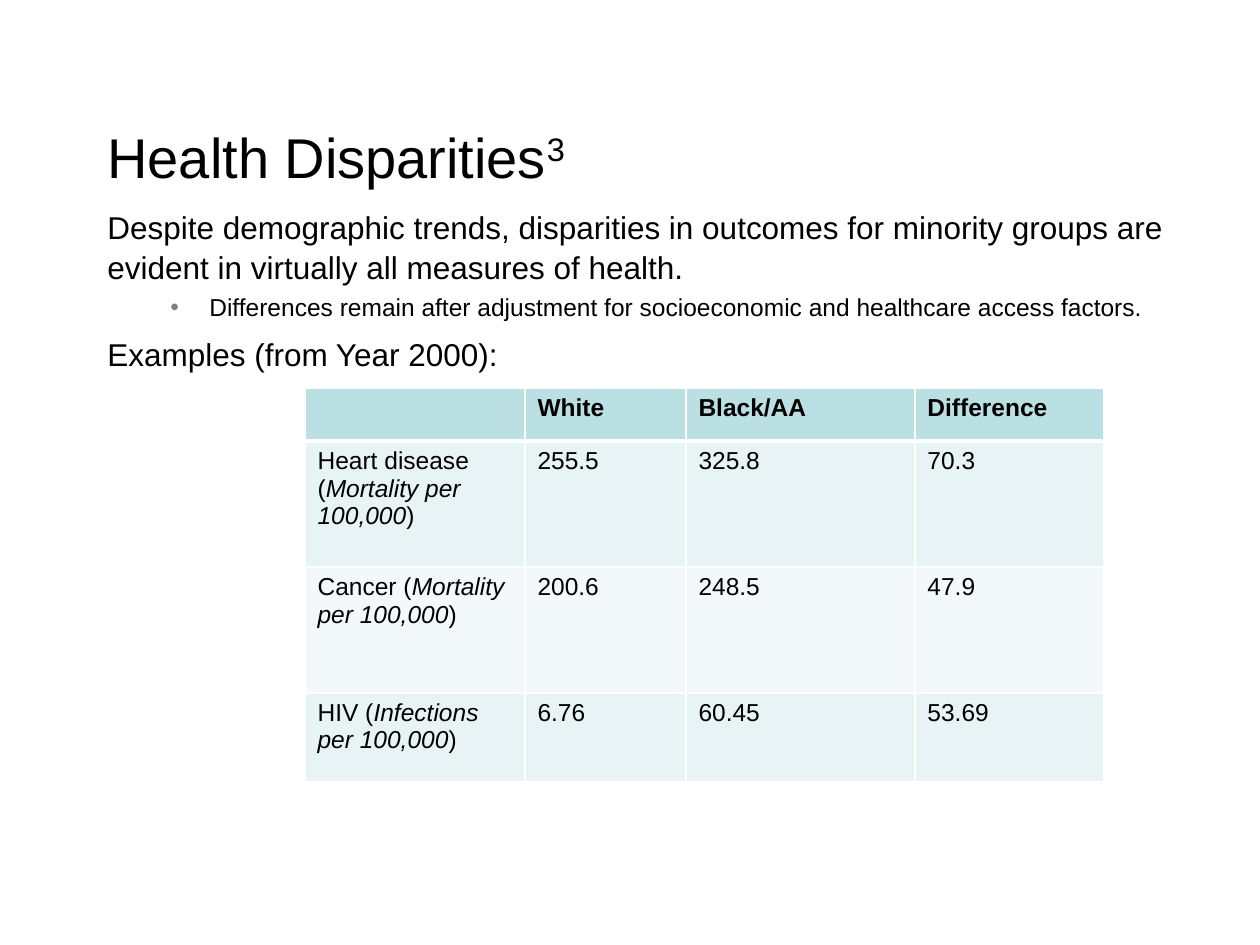
from lxml import etree
from pptx import Presentation
from pptx.dml.color import RGBColor
from pptx.oxml import ns
from pptx.util import Emu, Pt

PX = 914400 // 126
COLORS = {"text": "000000", "bullet": "808080", "border": "FFFFFF",
          "header": "BBE0E3", "odd": "E7F3F4", "even": "F3F9FA"}


def add_span(para, words, size, bold=False, italic=False):
    span = para.add_run()
    span.text = words
    span.font.name = "Arial"
    span.font.size = Pt(size)
    span.font.bold = bold
    span.font.italic = italic
    span.font.color.rgb = RGBColor.from_string(COLORS["text"])
    return span


def add_border(properties, side, width):
    line = etree.SubElement(properties, ns.qn(f"a:ln{side}"), w=str(Pt(width)))
    fill = etree.SubElement(line, ns.qn("a:solidFill"))
    etree.SubElement(fill, ns.qn("a:srgbClr"), val=COLORS["border"])


deck = Presentation()
deck.slide_width = Emu(1260 * PX)
deck.slide_height = Emu(945 * PX)
page = deck.slides.add_slide(deck.slide_layouts[6])

title = page.shapes.add_textbox(95 * PX, 116 * PX, 1102 * PX, 116 * PX)
title.text_frame.word_wrap = True
para = title.text_frame.paragraphs[0]
add_span(para, "Health Disparities", 32)
note = add_span(para, "3", 32)
note.font._element.set("baseline", "30000")

body = page.shapes.add_textbox(95 * PX, 200 * PX, 1124 * PX, 494 * PX)
body.text_frame.word_wrap = True
statements = [
    ("Despite demographic trends, disparities in outcomes for minority groups are "
     "evident in virtually all measures of health.", 18, 0, False),
    ("Differences remain after adjustment for socioeconomic and healthcare access factors.",
     14, 2.8, True),
    ("Examples (from Year 2000):", 18, 6.5, False),
]
for index, (words, size, gap, bulleted) in enumerate(statements):
    para = body.text_frame.paragraphs[0] if index == 0 else body.text_frame.add_paragraph()
    para.line_spacing = 1.05
    para.space_before = Pt(gap)
    if bulleted:
        properties = para._p.get_or_add_pPr()
        properties.set("marL", str(102 * PX))
        properties.set("indent", str(-39 * PX))
        color = etree.SubElement(properties, ns.qn("a:buClr"))
        etree.SubElement(color, ns.qn("a:srgbClr"), val=COLORS["bullet"])
        etree.SubElement(properties, ns.qn("a:buFont"), typeface="Arial")
        etree.SubElement(properties, ns.qn("a:buChar"), char="•")
    add_span(para, words, size)

widths = [220, 161, 229, 189]
heights = [53, 126, 126, 89]
rows = [
    (None, "White", "Black/AA", "Difference"),
    (("Heart disease", "Mortality per 100,000"), "255.5", "325.8", "70.3"),
    (("Cancer", "Mortality per 100,000"), "200.6", "248.5", "47.9"),
    (("HIV", "Infections per 100,000"), "6.76", "60.45", "53.69"),
]
table = page.shapes.add_table(len(rows), len(widths), 305 * PX, 388 * PX,
                              sum(widths) * PX, sum(heights) * PX).table
for column, width in zip(table.columns, widths):
    column.width = Emu(width * PX)
for row, height in zip(table.rows, heights):
    row.height = Emu(height * PX)

for r, values in enumerate(rows):
    shade = "header" if r == 0 else "odd" if r % 2 else "even"
    for c, value in enumerate(values):
        cell = table.cell(r, c)
        properties = cell._tc.get_or_add_tcPr()
        add_border(properties, "L", 1)
        add_border(properties, "R", 1)
        add_border(properties, "T", 3 if r == 1 else 1)
        add_border(properties, "B", 3 if r == 0 else 1)
        cell.fill.solid()
        cell.fill.fore_color.rgb = RGBColor.from_string(COLORS[shade])
        para = cell.text_frame.paragraphs[0]
        if isinstance(value, tuple):
            condition, measure = value
            add_span(para, f"{condition} (", 14)
            add_span(para, measure, 14, italic=True)
            add_span(para, ")", 14)
        elif value:
            add_span(para, value, 14, bold=r == 0)

deck.save("out.pptx")
